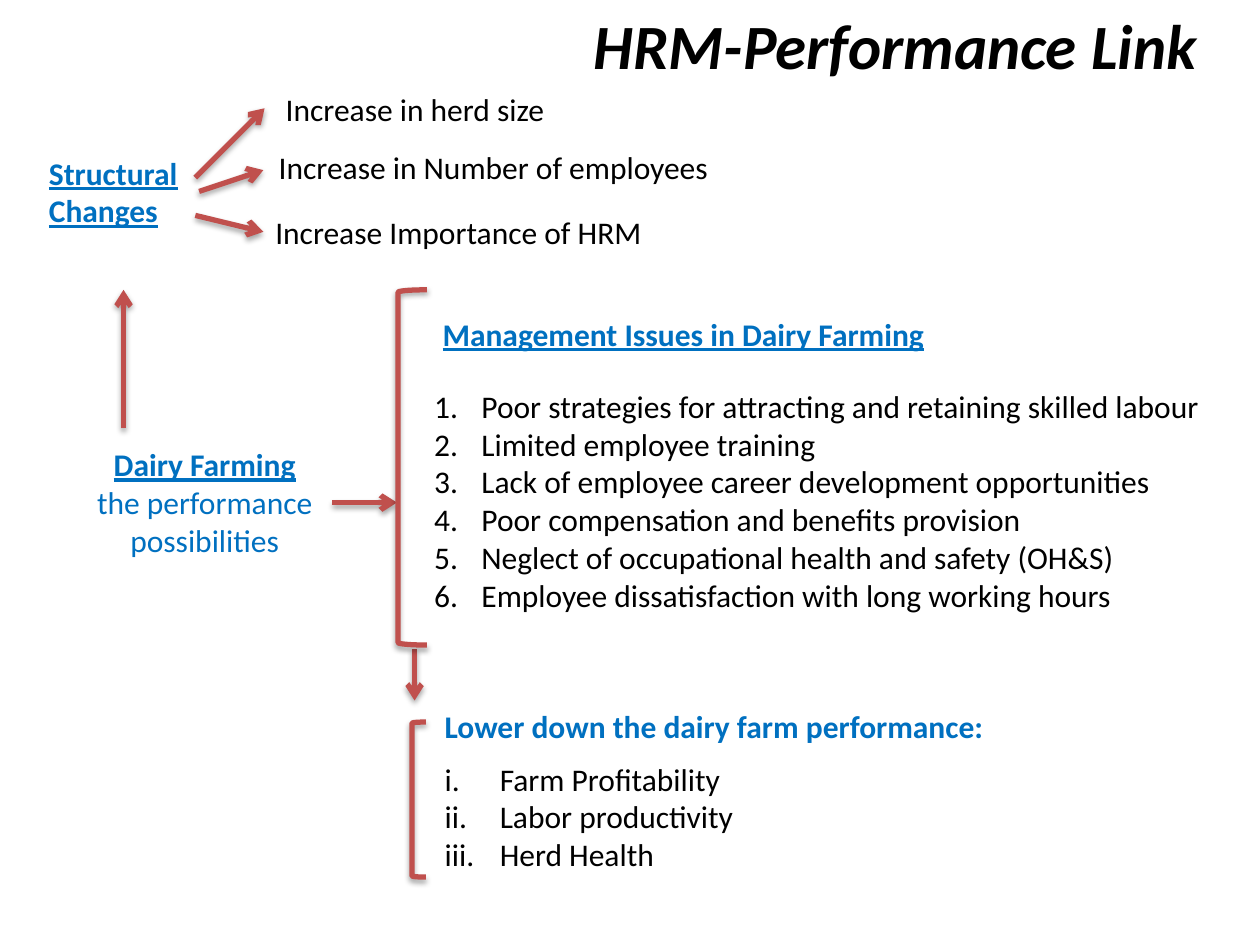
"""Build the HRM-Performance Link slide."""
from lxml import etree
from pptx import Presentation
from pptx.dml.color import RGBColor
from pptx.enum.shapes import MSO_CONNECTOR as CONN, MSO_SHAPE as SHAPE
from pptx.enum.text import MSO_ANCHOR as ANCHOR, MSO_AUTO_SIZE as AUTO, PP_ALIGN as ALIGN
from pptx.oxml.ns import qn
from pptx.util import Pt

BLACK = RGBColor(0x00, 0x00, 0x00)
BLUE = RGBColor(0x00, 0x70, 0xC0)
RED = RGBColor(0xC0, 0x50, 0x4D)


def write(sp, lines, box, size=18, color=BLACK, bold=False, italic=False,
          underline=False, align=ALIGN.LEFT, numbering=None, indent=0):
    sp.left, sp.top, sp.width, sp.height = [Pt(v) for v in box]
    tf = sp.text_frame
    tf.word_wrap = True
    tf.auto_size = AUTO.SHAPE_TO_FIT_TEXT
    tf.vertical_anchor = ANCHOR.TOP
    tf.text = "\n".join(lines)
    for p in tf.paragraphs:
        p.alignment = align
        r = p.runs[0]
        r.font.name, r.font.size = "Calibri", Pt(size)
        r.font.bold, r.font.italic, r.font.underline = bold, italic, underline
        r.font.color.rgb = color
        if numbering:
            pPr = p._p.get_or_add_pPr()
            pPr.set("marL", str(Pt(indent)))
            pPr.set("indent", str(-Pt(indent)))
            etree.SubElement(pPr, qn("a:buFont"), typeface="+mj-lt")
            etree.SubElement(pPr, qn("a:buAutoNum"), type=numbering)
    return tf


def style_line(sp):
    sp.line.color.rgb = RED
    sp.line.width = Pt(3)
    effects = etree.SubElement(sp._element.spPr, qn("a:effectLst"))
    shadow = etree.SubElement(effects, qn("a:outerShdw"), blurRad=str(Pt(3.15)),
                              dist=str(Pt(1.8)), dir="5400000", rotWithShape="0")
    tint = etree.SubElement(shadow, qn("a:srgbClr"), val=str(BLACK))
    etree.SubElement(tint, qn("a:alpha"), val="35000")


prs = Presentation()
prs.slide_width, prs.slide_height = Pt(720), Pt(540)
s = prs.slides.add_slide(prs.slide_layouts[5])

write(s.shapes.title, ["HRM-Performance Link"], (332, 0, 386.5, 51),
      size=36, bold=True, italic=True)

heading = dict(color=BLUE, bold=True, underline=True)
texts = [
    (["Structural Changes"], (20.9, 84.2, 130, 51), heading),
    (["Increase in herd size"], (156.2, 47.8, 176, 29), {}),
    (["Increase in Number of employees"], (152.2, 80.8, 287, 29), {}),
    (["Increase Importance of HRM"], (150.2, 118, 253, 29), {}),
    (["Management Issues in Dairy Farming"], (245.8, 176.4, 295, 29), heading),
    (["Poor strategies for attracting and retaining skilled labour",
      "Limited employee training",
      "Lack of employee career development opportunities",
      "Poor compensation and benefits provision",
      "Neglect of occupational health and safety (OH&S)",
      "Employee dissatisfaction with long working hours"],
     (241, 217.5, 459.5, 138), dict(numbering="arabicPeriod", indent=27)),
    (["Lower down the dairy farm performance:"], (247, 400.5, 340, 29),
     dict(color=BLUE, bold=True)),
    (["Farm Profitability", "Labor productivity", "Herd Health"],
     (247, 430.5, 312, 73), dict(numbering="romanLcPeriod", indent=31.5)),
]
for lines, box, fmt in texts:
    write(s.shapes.add_textbox(0, 0, 0, 0), lines, box, **fmt)

tf = write(s.shapes.add_textbox(0, 0, 0, 0),
           ["Dairy Farming", "the performance possibilities"],
           (40.3, 250.8, 153.4, 73), color=BLUE, align=ALIGN.CENTER)
r = tf.paragraphs[0].runs[0]
r.font.bold = r.font.underline = True

arrows = [
    (70.6, 244.8, 70.6, 165.6),
    (111.6, 101.5, 151.2, 61.9),
    (113.8, 109.4, 150.5, 97.2),
    (111.6, 123.1, 150.5, 132.5),
    (190, 287.2, 226.8, 287.2),
    (236.9, 370.8, 236.9, 400.3),
]
for ends in arrows:
    arrow = s.shapes.add_connector(CONN.STRAIGHT, *[Pt(v) for v in ends])
    style_line(arrow)
    etree.SubElement(arrow.line._get_or_add_ln(), qn("a:tailEnd"), type="arrow")

for box in [(227.5, 165.6, 16.5, 203), (235.4, 412.6, 8, 88.6)]:
    bracket = s.shapes.add_shape(SHAPE.LEFT_BRACKET, *[Pt(v) for v in box])
    bracket.fill.background()
    style_line(bracket)

prs.save("out.pptx")
